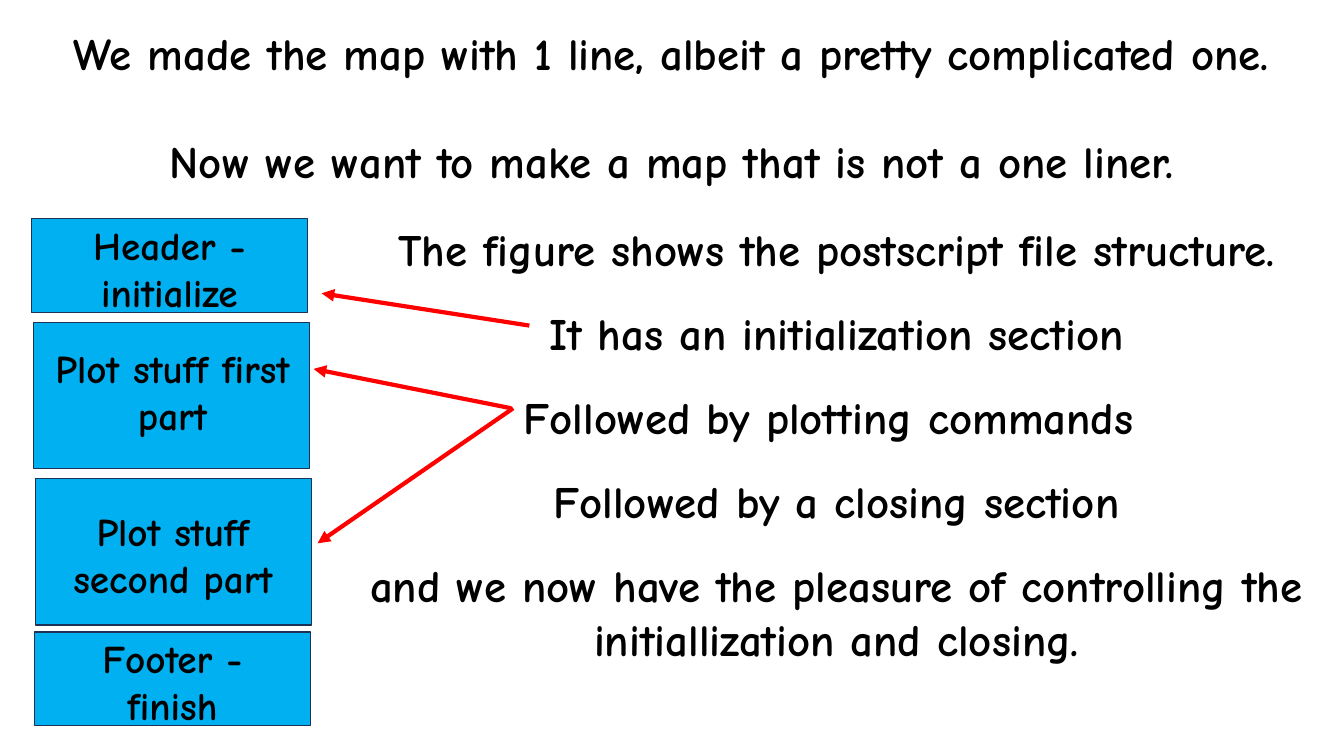
"""Slide on the structure of a postscript file, with arrows to its parts."""
from lxml import etree
from pptx import Presentation
from pptx.dml.color import RGBColor
from pptx.enum import shapes, text
from pptx.oxml import ns
from pptx.util import Inches, Pt

BLACK = RGBColor(0, 0, 0)
BLUE = RGBColor(0x00, 0xB0, 0xF0)
NAVY = RGBColor(0x1E, 0x32, 0x56)
RED = RGBColor(0xFF, 0, 0)

deck = Presentation()
deck.slide_width, deck.slide_height = Inches(13.33), Inches(7.5)
slide = deck.slides.add_slide(deck.slide_layouts[6])


def write(place, size, gap, lines):
    frame = slide.shapes.add_textbox(*map(Inches, place)).text_frame
    frame.word_wrap = True
    for i, line in enumerate(lines):
        para = frame.add_paragraph() if i else frame.paragraphs[0]
        para.alignment = text.PP_ALIGN.CENTER
        para.space_before = Pt(gap if i else 0)
        run = para.add_run()
        run.text = line
        run.font.name, run.font.size = "Comic Neue", Pt(size)
        run.font.bold, run.font.color.rgb = True, BLACK


write((0, 0.21, 13.33, 1.72), 32, 38.4, [
    "We made the map with 1 line, albeit a pretty complicated one.",
    "Now we want to make a map that is not a one liner.",
])

parts = [
    ((0.31, 2.17, 2.74, 0.93), (0.3, 2.15, 2.76, 1.04), "Header - initialize"),
    ((0.33, 3.2, 2.74, 1.45), (0.35, 3.37, 2.72, 1.04), "Plot stuff first part"),
    ((0.35, 4.75, 2.74, 1.45), (0.35, 4.98, 2.73, 1.04), "Plot stuff second part"),
    ((0.34, 6.27, 2.74, 0.93), (0.44, 6.24, 2.54, 1.04), "Footer - finish"),
]
for place, spot, label in parts:
    box = slide.shapes.add_shape(shapes.MSO_SHAPE.RECTANGLE, *map(Inches, place))
    box.shadow.inherit = False
    box.fill.solid()
    box.fill.fore_color.rgb = BLUE
    box.line.color.rgb, box.line.width = NAVY, Pt(1)
    write(spot, 28, 0, [label])

write((3.27, 2.15, 10.06, 4.54), 32, 21.6, [
    "The figure shows the postscript file structure.",
    "It has an initialization section",
    "Followed by plotting commands ",
    "Followed by a closing section",
    "and we now have the pleasure of controlling the initiallization and closing.",
])

arrows = [
    (5.25, 3.23, 3.19, 2.91),
    (5.07, 4.05, 3.11, 3.66),
    (5.09, 4.05, 3.15, 5.39),
]
for ends in arrows:
    arrow = slide.shapes.add_connector(shapes.MSO_CONNECTOR.STRAIGHT, *map(Inches, ends))
    arrow.line.color.rgb, arrow.line.width = RED, Pt(3)
    etree.SubElement(arrow.line._get_or_add_ln(), ns.qn("a:tailEnd"), type="triangle")
    etree.SubElement(arrow._element.spPr, ns.qn("a:effectLst"))

deck.save("out.pptx")
